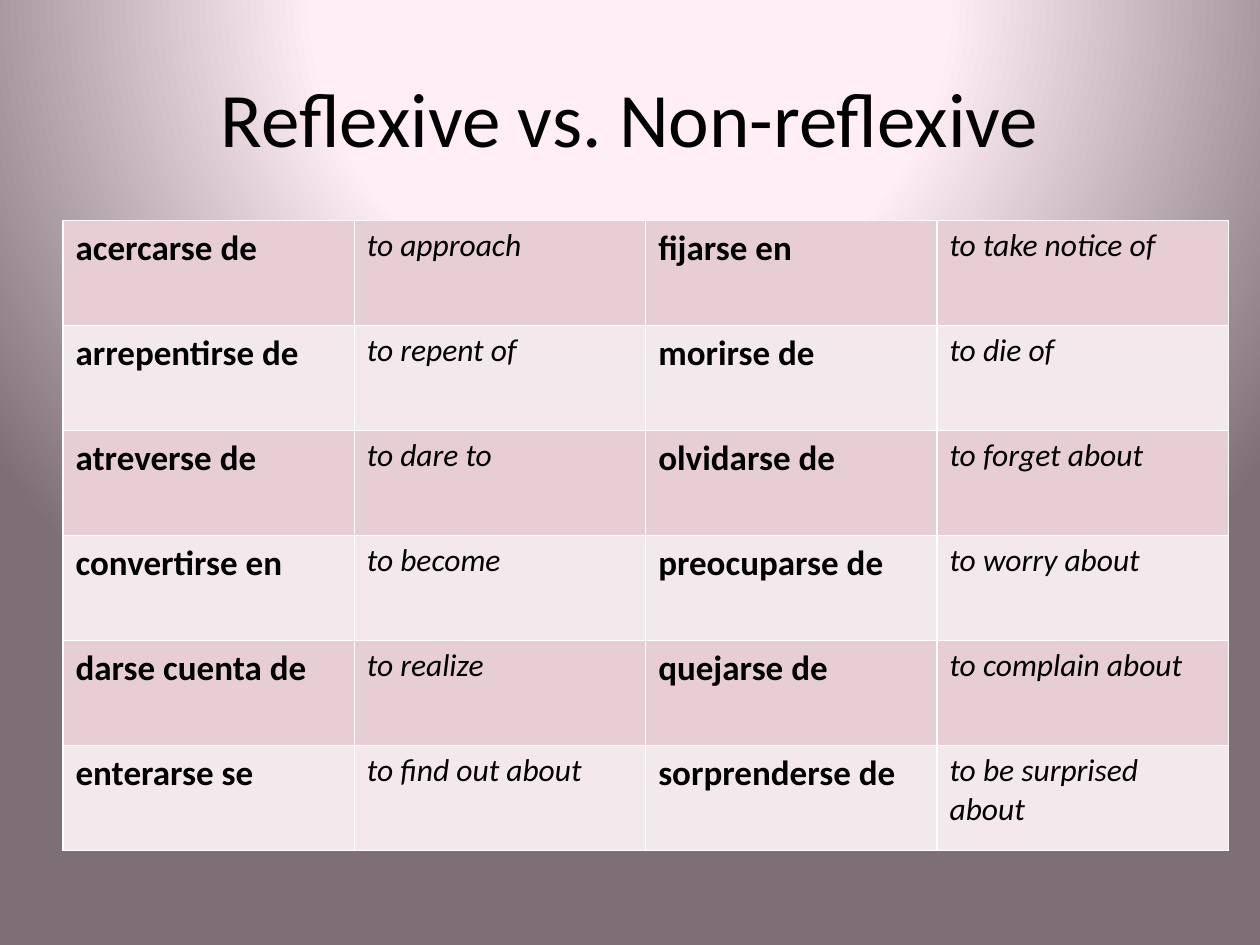
from pptx import Presentation, oxml
from pptx.dml.color import RGBColor
from pptx.enum import text
from pptx.oxml import ns
from pptx.util import Inches, Pt

COLORS = {"ink": "000000", "border": "FFFFFF", "odd": "E6CED4", "even": "F3E8EB"}
GLOW = {0: "FFF1F8", 40: "FFEEF6", 100: "7E6E75"}
FONT = "Calibri"
VERBS = [
    ("acercarse de", "to approach", "fijarse en", "to take notice of"),
    ("arrepentirse de", "to repent of", "morirse de", "to die of"),
    ("atreverse de", "to dare to", "olvidarse de", "to forget about"),
    ("convertirse en", "to become", "preocuparse de", "to worry about"),
    ("darse cuenta de", "to realize", "quejarse de", "to complain about"),
    ("enterarse se", "to find out about", "sorprenderse de", "to be surprised about"),
]


def add_run(paragraph, wording, size, bold=False, italic=False):
    """Append one formatted run to a paragraph."""
    run = paragraph.add_run()
    run.text = wording
    run.font.name, run.font.size = FONT, Pt(size)
    run.font.bold, run.font.italic = bold, italic
    run.font.color.rgb = RGBColor.from_string(COLORS["ink"])


def paint_background(slide):
    """Give the slide a circular glow centred above its top edge."""
    stops = "".join(
        f'<a:gs pos="{share * 1000}"><a:srgbClr val="{color}"/></a:gs>'
        for share, color in GLOW.items()
    )
    slide.element.cSld.insert(0, oxml.parse_xml(
        f'<p:bg {ns.nsdecls("p", "a")}><p:bgPr><a:gradFill rotWithShape="1">'
        f'<a:gsLst>{stops}</a:gsLst><a:path path="circle">'
        '<a:fillToRect l="50000" t="-80000" r="50000" b="180000"/></a:path>'
        '</a:gradFill><a:effectLst/></p:bgPr></p:bg>'
    ))


def place_title(slide, left, top, width, height):
    """Centre the heading in the given box."""
    title = slide.shapes.title
    title.left, title.top, title.width, title.height = left, top, width, height
    title.text_frame.vertical_anchor = text.MSO_ANCHOR.MIDDLE
    heading = title.text_frame.paragraphs[0]
    heading.alignment = text.PP_ALIGN.CENTER
    add_run(heading, "Reflexive vs. Non-reflexive", 44)


def border_cell(cell):
    """Draw a thin line on all four sides of a cell."""
    properties = cell._tc.get_or_add_tcPr()
    for position, side in enumerate(("lnL", "lnR", "lnT", "lnB")):
        properties.insert(position, oxml.parse_xml(
            f'<a:{side} {ns.nsdecls("a")} w="{Pt(1)}"><a:solidFill>'
            f'<a:srgbClr val="{COLORS["border"]}"/></a:solidFill></a:{side}>'
        ))


def place_verbs(slide, left, top, width, height):
    """Fill the given box with banded rows of verbs and meanings."""
    verbs = slide.shapes.add_table(
        len(VERBS), len(VERBS[0]), left, top, width, height
    ).table
    verbs.first_row = False
    for row, entries in enumerate(VERBS):
        band = RGBColor.from_string(COLORS["even" if row % 2 else "odd"])
        for column, wording in enumerate(entries):
            cell = verbs.cell(row, column)
            cell.fill.solid()
            cell.fill.fore_color.rgb = band
            border_cell(cell)
            meaning = column % 2 == 1
            add_run(cell.text_frame.paragraphs[0], wording,
                    18 if meaning else 20, bold=not meaning, italic=meaning)


def main():
    """Build and save the slide."""
    deck = Presentation()
    deck.slide_width, deck.slide_height = Inches(10), Inches(7.5)
    wide, high = deck.slide_width, deck.slide_height
    slide = deck.slides.add_slide(deck.slide_layouts[5])
    margin = int(wide * 0.05)
    paint_background(slide)
    place_title(slide, margin, int(high * 0.04), wide - 2 * margin, high // 6)
    place_verbs(slide, margin, high * 7 // 30, int(wide * 0.925), high * 2 // 3)
    deck.save("out.pptx")


if __name__ == "__main__":
    main()
